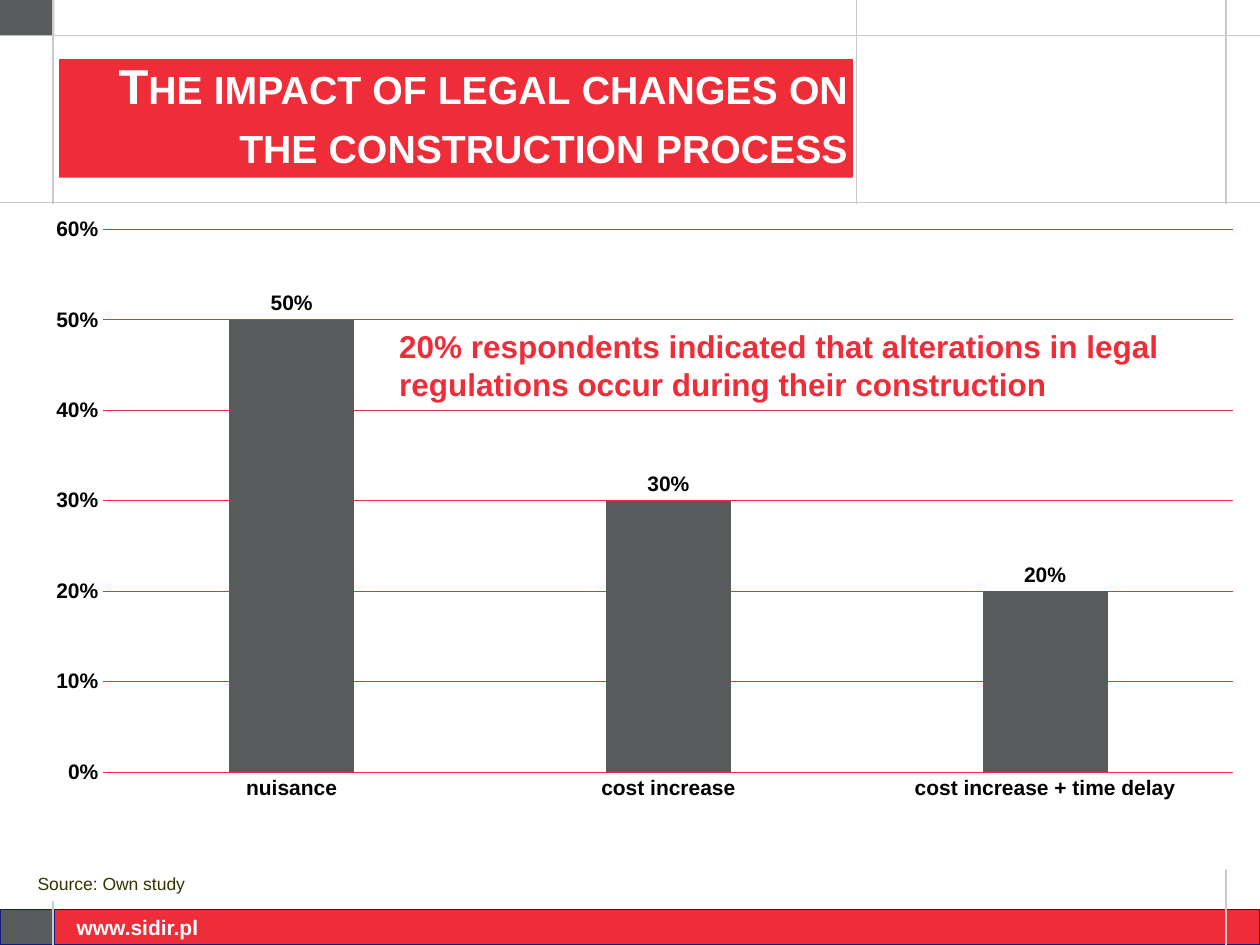
from lxml.etree import SubElement
from pptx import Presentation
from pptx.chart.data import CategoryChartData
from pptx.dml.color import RGBColor
from pptx.enum.chart import XL_CHART_TYPE, XL_LABEL_POSITION, XL_TICK_MARK
from pptx.enum.shapes import MSO_CONNECTOR, MSO_SHAPE
from pptx.enum.text import MSO_ANCHOR, PP_ALIGN
from pptx.oxml import parse_xml
from pptx.oxml.ns import nsdecls, qn
from pptx.util import Inches, Pt

FONT = "Arial"
COLORS = {
    "red": "EE2D38", "gray": "585B5C", "rule": "C9CACA", "navy": "0E1E7D",
    "white": "FFFFFF", "black": "000000", "olive": "333300",
}


def color(name):
    """Return the named colour."""
    return RGBColor.from_string(COLORS[name])


def style(font, size, name, bold=True):
    """Set face, size, colour and weight of a font."""
    font.name = FONT
    font.size = Pt(size)
    font.bold = bold
    font.color.rgb = color(name)


def block(slide, box, fill, edge=None):
    """Draw a filled rectangle with an optional edge."""
    shape = slide.shapes.add_shape(MSO_SHAPE.RECTANGLE, *map(Inches, box))
    shape.shadow.inherit = False
    shape.fill.solid()
    shape.fill.fore_color.rgb = color(fill)
    if edge:
        shape.line.color.rgb = color(edge)
        shape.line.width = Pt(0.75)
    else:
        shape.line.fill.background()
    return shape


def rule(slide, start, end, name="rule", width=0.75):
    """Draw a straight line between two points."""
    line = slide.shapes.add_connector(
        MSO_CONNECTOR.STRAIGHT, *map(Inches, start + end))
    line.line.color.rgb = color(name)
    line.line.width = Pt(width)
    SubElement(line._element.spPr, qn("a:effectLst"))


def write(shape, text, size, name, bold=True, align=PP_ALIGN.LEFT):
    """Put one styled paragraph in a shape and return its run."""
    frame = shape.text_frame
    frame.text = text
    frame.word_wrap = True
    frame.vertical_anchor = MSO_ANCHOR.MIDDLE
    para = frame.paragraphs[0]
    para.alignment = align
    run = para.runs[0]
    style(run.font, size, name, bold)
    return run


def label(slide, box, *args, **kwargs):
    """Add a text box and return its run."""
    shape = slide.shapes.add_textbox(*map(Inches, box))
    return write(shape, *args, **kwargs)


def frame(slide, box):
    """Draw the page grid, the title panel and the footer band."""
    left, top, width, height = box
    right, base = left + width, top + height
    band, side = 0.28, 0.43
    foot = base - band
    rule(slide, (left, top + band), (right, top + band))
    block(slide, (left, top, side, band), "gray")
    block(slide, (left + 0.47, top + 0.47, 6.3, 0.94), "red")
    rule(slide, (left, foot), (right, foot), "red")
    rule(slide, (left, top + 1.61), (right, top + 1.61))
    block(slide, (left + 0.35, foot, width - 0.35, band), "red", "navy")
    rule(slide, (left + 9.73, top), (left + 9.73, base))
    block(slide, (left, foot, side, band), "gray", "navy")
    rule(slide, (left + 0.42, top), (left + 0.42, base), width=1)
    label(slide, (left + 0.51, foot - 0.01, 3.47, 0.3),
          "www.sidir.pl", 12, "white")
    rule(slide, (left + 6.8, top), (left + 6.8, top + 1.64))


def title(slide, box):
    """Write the heading in small capitals, flush right."""
    shape = slide.shapes.add_textbox(*map(Inches, box))
    run = write(shape, "The impact of legal changes on the construction process",
                28, "white", align=PP_ALIGN.RIGHT)
    text = shape.text_frame
    text.margin_left = text.margin_right = 0
    text.margin_top = text.margin_bottom = 0
    run.font._element.set("cap", "small")


def layout(chart):
    """Fix the plot area and paint the chart ground white."""
    parts = zip("xywh", (0.082, 0.038, 0.897, 0.816))
    modes = "".join(f'<c:{key}Mode val="edge"/>' for key in "xy")
    sizes = "".join(f'<c:{key} val="{value}"/>' for key, value in parts)
    plot = chart._chartSpace.chart.plotArea
    for old in plot.findall(qn("c:layout")):
        plot.remove(old)
    plot.insert(0, parse_xml(
        f'<c:layout {nsdecls("c")}><c:manualLayout>'
        f'<c:layoutTarget val="inner"/>{modes}{sizes}'
        '</c:manualLayout></c:layout>'))
    chart._chartSpace.chart.addnext(parse_xml(
        f'<c:spPr {nsdecls("c", "a")}><a:solidFill>'
        f'<a:srgbClr val="{COLORS["white"]}"/></a:solidFill>'
        '<a:ln><a:noFill/></a:ln></c:spPr>'))


def graph(slide, box):
    """Add the column chart of survey replies."""
    data = CategoryChartData(number_format="0%")
    data.categories = ["nuisance", "cost increase", "cost increase + time delay"]
    data.add_series("Series 1", (0.5, 0.3, 0.2))
    chart = slide.shapes.add_chart(
        XL_CHART_TYPE.COLUMN_CLUSTERED, *map(Inches, box), data).chart
    chart.has_title = chart.has_legend = False
    style(chart.font, 12, "black")
    layout(chart)

    plot = chart.plots[0]
    plot.gap_width, plot.overlap = 201, -27
    plot.vary_by_categories = False
    fill = plot.series[0].format.fill
    fill.solid()
    fill.fore_color.rgb = color("gray")
    plot.has_data_labels = True
    labels = plot.data_labels
    labels.show_value = True
    labels.number_format, labels.number_format_is_linked = "0%", False
    labels.position = XL_LABEL_POSITION.OUTSIDE_END
    style(labels.font, 12, "black")

    cats, vals = chart.category_axis, chart.value_axis
    for axis in (cats, vals):
        axis.major_tick_mark = axis.minor_tick_mark = XL_TICK_MARK.NONE
        style(axis.tick_labels.font, 12, "black")
    vals.minimum_scale, vals.maximum_scale, vals.major_unit = 0, 0.6, 0.1
    vals.tick_labels.number_format = "0%"
    vals.tick_labels.number_format_is_linked = False
    vals.format.line.fill.background()
    for part in (cats, vals.major_gridlines):
        part.format.line.color.rgb = color("red")
        part.format.line.width = Pt(0.75)


def note(slide, box):
    """Write the finding over the chart."""
    run = label(slide, box, "20% respondents indicated that alterations in "
                "legal regulations occur during their construction", 18, "red")
    run.font.bold = True


def source(slide, box):
    """Write the source line on a white ground."""
    write(block(slide, box, "white"), "Source: Own study", 10, "olive", False)


def main():
    """Build and save the slide."""
    deck = Presentation()
    deck.slide_width, deck.slide_height = Inches(10), Inches(7.5)
    slide = deck.slides.add_slide(deck.slide_layouts[6])
    frame(slide, (0, 0, 10, 7.5))
    graph(slide, (0, 1.62, 10, 5.28))
    title(slide, (0.43, 0.44, 6.3, 0.94))
    note(slide, (3.07, 2.54, 6.44, 0.71))
    source(slide, (0.2, 6.88, 5.75, 0.27))
    deck.save("out.pptx")


if __name__ == "__main__":
    main()
